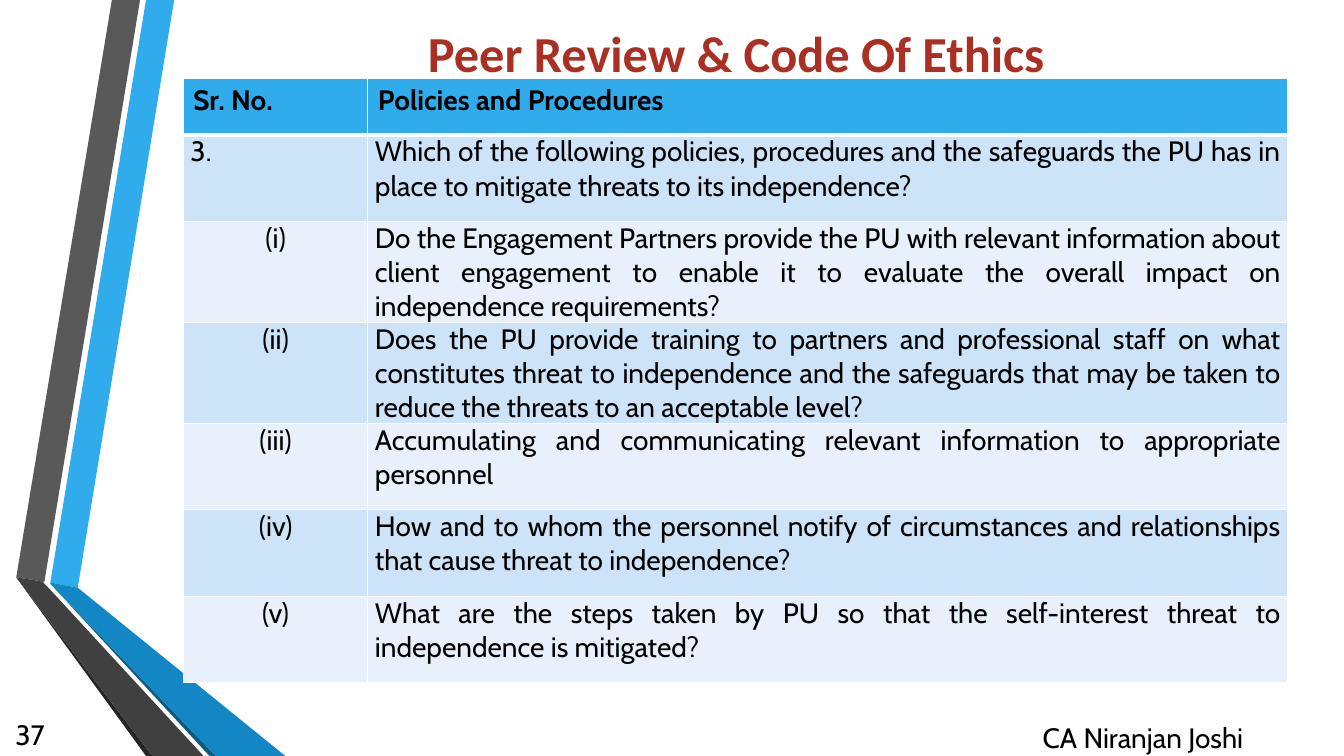
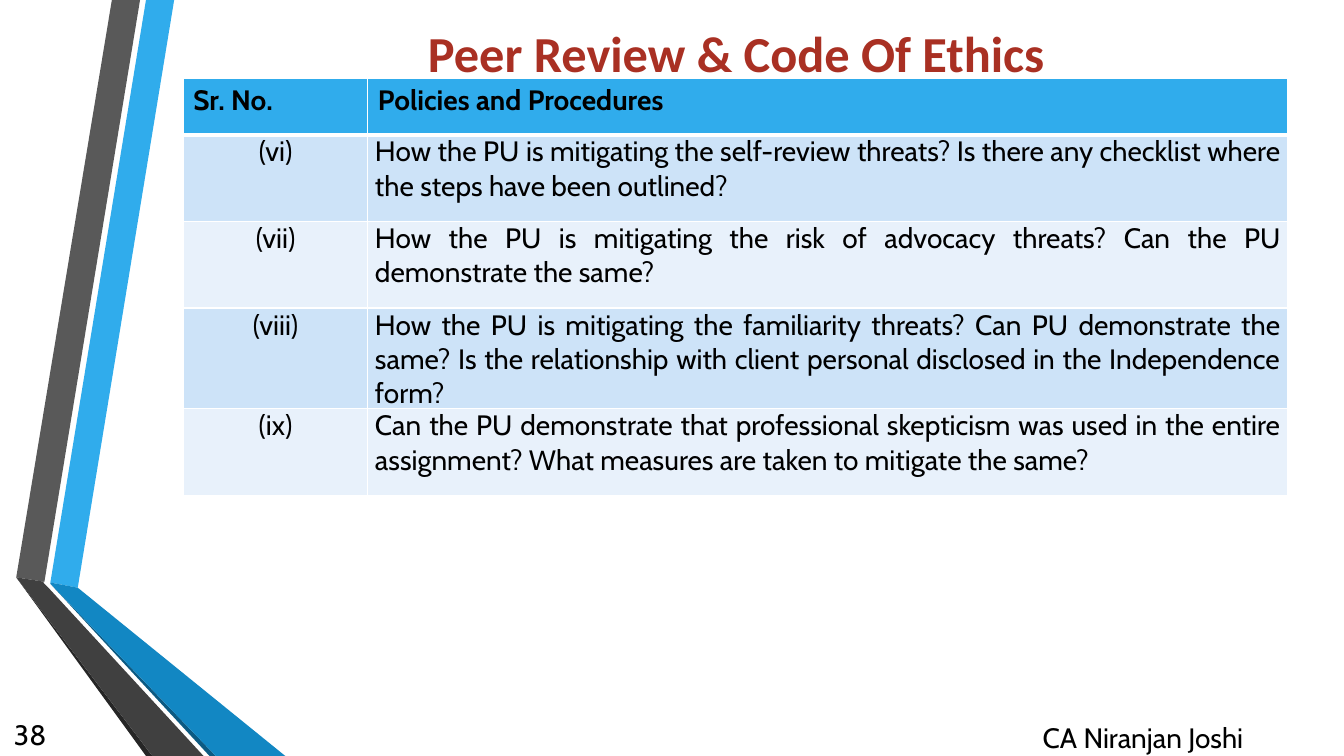
from dataclasses import dataclass

from lxml import etree
from pptx import Presentation
from pptx.dml import color
from pptx.enum import text
from pptx.oxml import ns
from pptx.util import Cm, Pt


@dataclass(frozen=True)
class Theme:
    ink: str = "000000"
    white: str = "FFFFFF"
    title: str = "A93023"
    header: str = "30ACEC"
    rows: tuple = ("CDE3F8", "E8F1FB")
    grey: str = "595959"
    dark_grey: str = "404040"
    grey_edge: str = "262626"
    deep_blue: str = "1287C3"
    blue_edge: str = "0C5A82"
    title_font: str = "Calibri"
    body_font: str = "Cabin"
    title_size: int = 36
    body_size: int = 20
    rule: int = 1
    header_rule: int = 3


THEME = Theme()
CENTER = text.PP_ALIGN.CENTER
JUSTIFY = text.PP_ALIGN.JUSTIFY
LEFT = text.PP_ALIGN.LEFT
WIDTH, HEIGHT = 33.87, 19.05

RIBBONS = [
    (THEME.header, [(1.27, 14.68), (1.96, 14.81), (4.39, 0), (3.68, 0)]),
    (THEME.grey, [(3.53, 0), (2.82, 0), (0.41, 14.55), (1.12, 14.66)]),
    (THEME.grey_edge, [(0.41, 14.55), (3.68, HEIGHT), (3.84, HEIGHT)]),
    (THEME.blue_edge, [(1.27, 14.71), (5.28, HEIGHT), (5.44, HEIGHT)]),
    (THEME.deep_blue, [(1.27, 14.68), (1.27, 14.71), (5.44, HEIGHT),
                       (7.19, HEIGHT), (1.96, 14.81)]),
    (THEME.dark_grey, [(5.13, HEIGHT), (1.22, 14.81), (1.09, 14.68),
                       (1.12, 14.66), (0.41, 14.55), (3.84, HEIGHT)]),
]

TITLE = "Peer Review & Code Of Ethics"
AUTHOR = "CA Niranjan Joshi"
HEADINGS = ("Sr. No.", "Policies and Procedures")
PAGES = [
    (37, [
        ("3.", "Which of the following policies, procedures and the safeguards the PU "
               "has in place to mitigate threats to its independence?"),
        ("(i)", "Do the Engagement Partners provide the PU with relevant information "
                "about client engagement to enable it to evaluate the overall impact "
                "on independence requirements?"),
        ("(ii)", "Does the PU provide training to partners and professional staff on "
                 "what constitutes threat to independence and the safeguards that may "
                 "be taken to reduce the threats to an acceptable level?"),
        ("(iii)", "Accumulating and communicating relevant information to appropriate "
                  "personnel"),
        ("(iv)", "How and to whom the personnel notify of circumstances and "
                 "relationships that cause threat to independence?"),
        ("(v)", "What are the steps taken by PU so that the self-interest threat to "
                "independence is mitigated?"),
    ]),
    (38, [
        ("(vi)", "How the PU is mitigating the self-review threats? Is there any "
                 "checklist where the steps have been outlined?"),
        ("(vii)", "How the PU is mitigating the risk of advocacy threats? Can the PU "
                  "demonstrate the same?"),
        ("(viii)", "How the PU is mitigating the familiarity threats? Can PU "
                   "demonstrate the same? Is the relationship with client personal "
                   "disclosed in the Independence form?"),
        ("(ix)", "Can the PU demonstrate that professional skepticism was used in the "
                 "entire assignment? What measures are taken to mitigate the same?"),
    ]),
]


class ReviewDeck:
    """Builds the peer review pages in one shared style."""

    def __init__(self, theme):
        self.theme = theme
        self.deck = Presentation()
        self.deck.slide_width, self.deck.slide_height = Cm(WIDTH), Cm(HEIGHT)
        self.page = None

    def add_page(self, number):
        self.page = self.deck.slides.add_slide(self.deck.slide_layouts[6])
        for fill, points in RIBBONS:
            self.ribbon(fill, points)
        theme = self.theme
        self.label(TITLE, (5.51, 0.43, 26.09, 1.78), font=theme.title_font,
                   size=theme.title_size, tint=theme.title, bold=True)
        self.label(str(number), (0, 18, 1.52, 1.02))
        self.label(AUTHOR, (24.36, 18.03, 8.89, 1.02), text.MSO_ANCHOR.TOP)

    def ribbon(self, fill, points):
        start, *others = [(Cm(x), Cm(y)) for x, y in points]
        builder = self.page.shapes.build_freeform(*start)
        builder.add_line_segments(others)
        shape = builder.convert_to_shape()
        shape.shadow.inherit = False
        self.paint(shape.fill, fill)
        shape.line.fill.background()

    def label(self, words, place, anchor=text.MSO_ANCHOR.MIDDLE, **style):
        box = self.page.shapes.add_textbox(*map(Cm, place))
        box.text_frame.word_wrap = True
        box.text_frame.vertical_anchor = anchor
        self.add_words(box.text_frame, words, CENTER, **style)

    def add_words(self, frame, words, align, font=None, size=None, tint=None, bold=False):
        para = frame.paragraphs[0]
        para.alignment = align
        span = para.add_run()
        span.text = words
        span.font.name = font or self.theme.body_font
        span.font.size = Pt(size or self.theme.body_size)
        span.font.bold = bold
        span.font.color.rgb = color.RGBColor.from_string(tint or self.theme.ink)

    def paint(self, fill, tint):
        fill.solid()
        fill.fore_color.rgb = color.RGBColor.from_string(tint)

    def border(self, cell, top, bottom):
        rule = self.theme.rule
        properties = cell._tc.get_or_add_tcPr()
        for side, width in (("L", rule), ("R", rule), ("T", top), ("B", bottom)):
            line = etree.SubElement(properties, ns.qn(f"a:ln{side}"), w=str(Pt(width)))
            solid = etree.SubElement(line, ns.qn("a:solidFill"))
            etree.SubElement(solid, ns.qn("a:srgbClr"), val=self.theme.white)

    def table(self, entries):
        widths = (4.65, 23.19)
        heights = [1.42] + [2.18] * len(entries)
        frame = self.page.shapes.add_table(
            len(heights), len(widths), Cm(4.62), Cm(1.98),
            Cm(sum(widths)), Cm(sum(heights)))
        grid = frame.table
        grid.horz_banding = False
        for column, width in zip(grid.columns, widths):
            column.width = Cm(width)
        for row, height in zip(grid.rows, heights):
            row.height = Cm(height)
        for index, words in enumerate(HEADINGS):
            self.header_cell(grid.cell(0, index), words)
        for row, (number, question) in enumerate(entries, 1):
            align = CENTER if number.startswith("(") else JUSTIFY
            self.body_cell(grid.cell(row, 0), row, number, align)
            self.body_cell(grid.cell(row, 1), row, question, JUSTIFY)

    def header_cell(self, cell, words):
        self.border(cell, self.theme.rule, self.theme.header_rule)
        self.paint(cell.fill, self.theme.header)
        self.add_words(cell.text_frame, words, LEFT, bold=True)

    def body_cell(self, cell, row, words, align):
        top = self.theme.header_rule if row == 1 else self.theme.rule
        self.border(cell, top, self.theme.rule)
        self.paint(cell.fill, self.theme.rows[(row - 1) % 2])
        cell.margin_left = cell.margin_right = Cm(0.18)
        cell.margin_top = cell.margin_bottom = Cm(0)
        self.add_words(cell.text_frame, words, align)


def main():
    review = ReviewDeck(THEME)
    for number, entries in PAGES:
        review.add_page(number)
        review.table(entries)
    review.deck.save("out.pptx")


if __name__ == "__main__":
    main()
